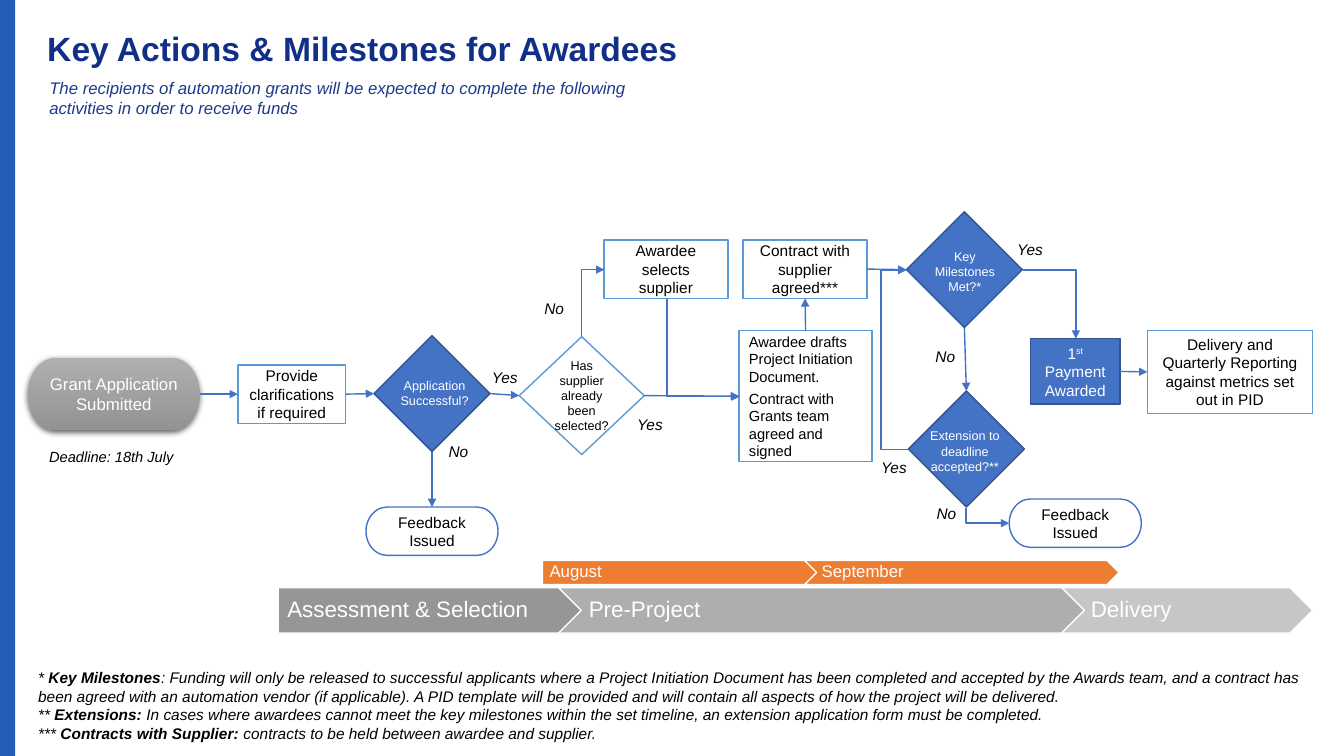
from lxml.etree import SubElement
from pptx import Presentation
from pptx.dml.color import RGBColor
from pptx.enum.shapes import MSO_CONNECTOR, MSO_SHAPE
from pptx.enum.text import MSO_ANCHOR, PP_ALIGN
from pptx.oxml.ns import qn
from pptx.util import Inches, Pt

WHITE = RGBColor(0xFF, 0xFF, 0xFF)
BLACK = RGBColor(0, 0, 0)
BLUE = RGBColor(0x44, 0x72, 0xC4)
DARK = RGBColor(0x32, 0x54, 0x91)
SKY = RGBColor(0x5B, 0x9B, 0xD5)
BAR = RGBColor(0x21, 0x5D, 0xB9)
NAVY = RGBColor(0x11, 0x2F, 0x87)
INDIGO = RGBColor(0x1D, 0x39, 0x8D)
ORANGE = RGBColor(0xED, 0x7D, 0x31)
GREYS = [RGBColor(v, v, v) for v in (0x96, 0xAE, 0xC6)]
LIGHT = RGBColor(0xAF, 0xAF, 0xAF)
DIM = RGBColor(0x93, 0x93, 0x93)

RECT = MSO_SHAPE.RECTANGLE
ROUND = MSO_SHAPE.FLOWCHART_TERMINATOR
DIAMOND = MSO_SHAPE.FLOWCHART_DECISION
PLATE = MSO_SHAPE.PENTAGON
CHEVRON = MSO_SHAPE.CHEVRON

deck = Presentation()
deck.slide_width = Inches(13.33)
deck.slide_height = Inches(7.5)
slide = deck.slides.add_slide(deck.slide_layouts[6])
shapes = slide.shapes


def write(shape, paras, size, color, align=PP_ALIGN.LEFT, anchor=MSO_ANCHOR.TOP,
          insets=(0.1, 0.05, 0.1, 0.05), spacing=1.0, **style):
    frame = shape.text_frame
    left, top, right, bottom = map(Inches, insets)
    layout = {"word_wrap": True, "vertical_anchor": anchor, "margin_left": left,
              "margin_top": top, "margin_right": right, "margin_bottom": bottom}
    for name, value in layout.items():
        setattr(frame, name, value)
    for i, runs in enumerate(paras):
        para = frame.add_paragraph() if i else frame.paragraphs[0]
        para.alignment = align
        para.line_spacing = spacing
        for text, extra in runs:
            run = para.add_run()
            run.text = text
            look = {"name": "Arial", "size": Pt(size), **style, **extra}
            for name, value in look.items():
                setattr(run.font, name, value)
            run.font.color.rgb = color


def draw(kind, at, fill, edge=None):
    shape = shapes.add_shape(kind, *map(Inches, at))
    shape.shadow.inherit = False
    shape.fill.solid()
    shape.fill.fore_color.rgb = fill
    if edge is None:
        shape.line.fill.background()
    else:
        shape.line.color.rgb = edge
        shape.line.width = Pt(1)
    return shape


draw(RECT, (0, 0, 0.15, 7.5), BAR)
title = shapes.add_textbox(*map(Inches, (0.37, 0.22, 9.49, 0.96)))
write(title, [[("Key Actions & Milestones for Awardees", {})]], 24, NAVY,
      insets=(0.1,) * 4, spacing=0.9, bold=True)
intro = shapes.add_textbox(*map(Inches, (0.39, 0.72, 6.55, 0.5)))
write(intro, [[("The recipients of automation grants will be expected to complete "
                "the following activities in order to receive funds", {})]],
      12, INDIGO, italic=True)

bands = [
    (PLATE, 2.76, 5.83, 5.35, 0.45, GREYS[0], 2.76, 0.09, 16, "Assessment & Selection"),
    (CHEVRON, 5.54, 5.83, 6.6, 0.45, GREYS[1], 5.77, 0.07, 16, "Pre-Project"),
    (CHEVRON, 10.53, 5.83, 2.49, 0.45, GREYS[2], 10.75, 0.07, 16, "Delivery"),
    (PLATE, 5.38, 5.56, 3.7, 0.24, ORANGE, 5.38, 0.07, 12, "August"),
    (CHEVRON, 7.98, 5.56, 3.12, 0.24, ORANGE, 8.1, 0.05, 12, "September"),
]
for kind, x, y, w, h, fill, start, inset, size, text in bands:
    draw(kind, (x, y, w, h), fill, WHITE)
    label = shapes.add_textbox(*map(Inches, (start, y, x + w - h / 2 - start, h)))
    write(label, [[(text, {})]], size, WHITE, anchor=MSO_ANCHOR.MIDDLE,
          insets=(inset, 0.04, 0.02, 0.04), spacing=0.9)

steps = [
    ("grant", ROUND, (0.28, 3.55, 1.7, 0.72), LIGHT, None, 12, "Grant Application Submitted"),
    ("clarify", RECT, (2.36, 3.62, 1.07, 0.58), WHITE, SKY, 11,
     "Provide clarifications if required"),
    ("has", DIAMOND, (5.15, 3.34, 1.24, 1.17), WHITE, SKY, 9,
     "Has supplier already been selected?"),
    ("select", RECT, (5.99, 2.38, 1.23, 0.58), WHITE, SKY, 11, "Awardee selects supplier"),
    ("agreed", RECT, (7.37, 2.38, 1.23, 0.58), WHITE, SKY, 11,
     "Contract with supplier agreed***"),
    ("report", RECT, (11.38, 3.28, 1.64, 0.82), WHITE, SKY, 11,
     "Delivery and Quarterly Reporting against metrics set out in PID"),
    ("reject", ROUND, (3.63, 5.03, 1.31, 0.48), WHITE, BLUE, 11, "Feedback Issued"),
    ("refuse", ROUND, (10.01, 4.95, 1.31, 0.48), WHITE, BLUE, 11, "Feedback Issued"),
]
nodes = {}
for name, kind, at, fill, edge, size, text in steps:
    nodes[name] = draw(kind, at, fill, edge)
    insets = (0.04, 0.08, 0.04, 0.08) if kind == DIAMOND else (0.1, 0.05, 0.1, 0.05)
    write(nodes[name], [[(text, {})]], size, WHITE if name == "grant" else BLACK,
          PP_ALIGN.CENTER, MSO_ANCHOR.MIDDLE, insets)

grant = nodes["grant"]
grant.fill.gradient()
grant.fill.gradient_angle = 270
for stop, color in zip(grant.fill.gradient_stops, (LIGHT, DIM)):
    stop.color.rgb = color
effects = grant._element.spPr.find(qn("a:effectLst"))
shade = SubElement(effects, qn("a:outerShdw"), blurRad=str(Pt(4.5)),
                   dist=str(Pt(1.5)), dir="5400000", rotWithShape="0")
tint = SubElement(shade, qn("a:srgbClr"), val="000000")
SubElement(tint, qn("a:alpha"), val="63000")

nodes["draft"] = draw(RECT, (7.33, 3.28, 1.32, 1.3), WHITE, SKY)
write(nodes["draft"], [[("Awardee drafts Project Initiation Document.", {})],
                       [("Contract with Grants team agreed and signed", {})]],
      10.5, BLACK, anchor=MSO_ANCHOR.MIDDLE)
nodes["draft"].text_frame.paragraphs[0].space_after = Pt(3)

nodes["pay"] = draw(RECT, (10.22, 3.36, 0.89, 0.65), BLUE, DARK)
write(nodes["pay"], [[("1", {}), ("st", {}), (" Payment Awarded", {})]], 11, WHITE,
      PP_ALIGN.CENTER, MSO_ANCHOR.MIDDLE)
ordinal = nodes["pay"].text_frame.paragraphs[0].runs[1]
ordinal._r.get_or_add_rPr().set("baseline", "30000")

checks = [
    ("success", 3.71, 3.33, (3.82, 3.7, 0.98, 0.41), "Application Successful?"),
    ("met", 8.99, 2.1, (9.08, 2.42, 0.98, 0.56), "Key Milestones Met?*"),
    ("extend", 9.01, 3.88, (9.08, 4.2, 0.98, 0.56), "Extension to deadline accepted?**"),
]
for name, x, y, at, text in checks:
    nodes[name] = draw(DIAMOND, (x, y, 1.15, 1.15), BLUE, DARK)
    label = shapes.add_textbox(*map(Inches, at))
    write(label, [[(text, {})]], 9, WHITE, PP_ALIGN.CENTER)

arrows = []
links = [
    ("grant", 3, "clarify", 1), ("clarify", 3, "success", 1), ("success", 3, "has", 1),
    ("success", 2, "reject", 0), ("has", 3, "draft", 1), ("draft", 0, "agreed", 2),
    ("agreed", 3, "met", 1), ("met", 2, "extend", 0), ("pay", 3, "report", 1),
]
for first, out, last, into in links:
    arrow = shapes.add_connector(MSO_CONNECTOR.STRAIGHT, 0, 0, 0, 0)
    arrow.begin_connect(nodes[first], out)
    arrow.end_connect(nodes[last], into)
    arrows.append(arrow)

bends = [
    (5.55, 2.89, 0.66, 0.23, {"rot": "5400000", "flipH": "1", "flipV": "1"}, None),
    (6.49, 3.09, 0.97, 0.72, {"rot": "16200000", "flipH": "1"}, None),
    (10.15, 2.68, 0.52, 0.68, {}, None),
    (9.72, 4.9, 0.15, 0.43, {"rot": "16200000", "flipH": "1"}, None),
    (8.99, 2.68, 0.02, 1.78, {"rot": "10800000"}, 1350000),
]
for x, y, w, h, turn, bend in bends:
    arrow = shapes.add_connector(MSO_CONNECTOR.ELBOW, *map(Inches, (x, y, x + w, y + h)))
    props = arrow._element.spPr
    for name, value in turn.items():
        props.find(qn("a:xfrm")).set(name, value)
    shape = props.find(qn("a:prstGeom"))
    if bend is None:
        shape.set("prst", "bentConnector2")
    else:
        SubElement(shape.find(qn("a:avLst")), qn("a:gd"), name="adj1", fmla=f"val {bend}")
    arrows.append(arrow)

for arrow in arrows:
    arrow.line.color.rgb = BLUE
    arrow.line.width = Pt(1)
    SubElement(arrow.line._get_or_add_ln(), qn("a:tailEnd"), type="triangle")
    SubElement(arrow._element.spPr, qn("a:effectLst"))

labels = [
    ("Yes", 6.22, 4.07), ("No", 5.3, 2.92), ("Yes", 4.78, 3.6), ("No", 4.35, 4.34),
    ("No", 9.18, 3.39), ("Yes", 9.99, 2.33), ("Yes", 8.64, 4.5), ("No", 9.19, 4.95),
]
for text, x, y in labels:
    label = shapes.add_textbox(*map(Inches, (x, y, 0.53 if text == "Yes" else 0.42, 0.29)))
    write(label, [[(text, {})]], 11, BLACK, italic=True)

due = shapes.add_textbox(*map(Inches, (0.39, 4.39, 1.84, 0.29)))
write(due, [[("Deadline: 18th July", {})]], 10.5, BLACK, italic=True)

bold = {"bold": True}
notes = shapes.add_textbox(*map(Inches, (0.28, 6.58, 12.92, 0.84)))
write(notes, [
    [("* ", {}), ("Key Milestones", bold),
     (": Funding will only be released to successful applicants where a Project Initiation "
      "Document has been completed and accepted by the Awards team, and a contract has been "
      "agreed with an automation vendor (if applicable). A PID template will be provided and "
      "will contain all aspects of how the project will be delivered.", {})],
    [("** ", {}), ("Extensions: ", bold),
     ("In cases where awardees cannot meet the key milestones within the set timeline, "
      "an extension application form must be completed.", {})],
    [("*** ", {}), ("Contracts with Supplier: ", bold),
     ("contracts to be held between awardee and supplier.", {})],
], 11, BLACK, italic=True)

deck.save("out.pptx")
